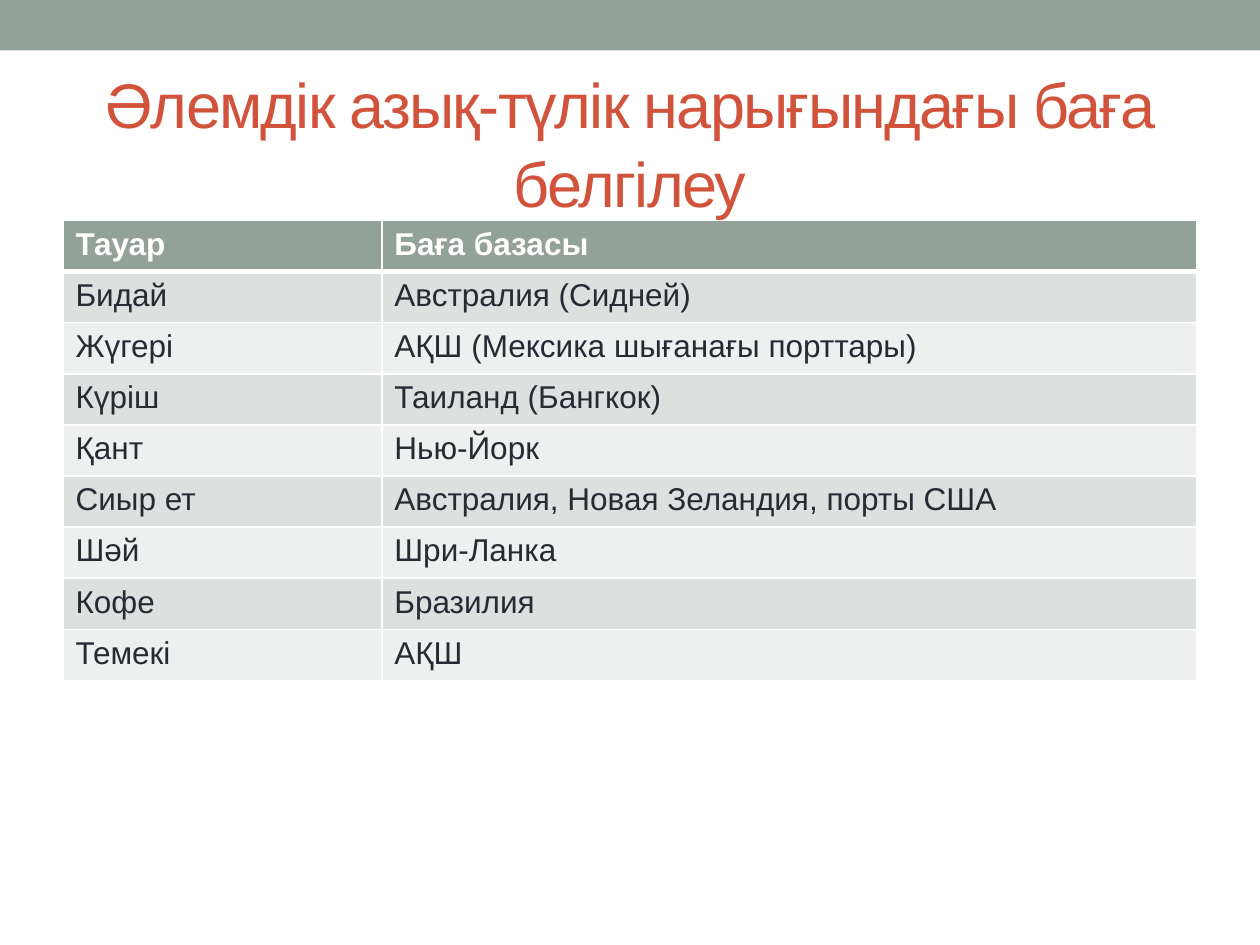
from lxml import etree
from pptx import Presentation
from pptx.dml.color import RGBColor
from pptx.enum.shapes import MSO_SHAPE
from pptx.enum.text import MSO_ANCHOR, MSO_AUTO_SIZE, PP_ALIGN
from pptx.oxml.ns import qn
from pptx.util import Pt

RECTANGLE = MSO_SHAPE.RECTANGLE
MIDDLE = MSO_ANCHOR.MIDDLE
NO_AUTOFIT = MSO_AUTO_SIZE.NONE
LEFT, CENTER = PP_ALIGN.LEFT, PP_ALIGN.CENTER
TITLE_ONLY = 5

COLORS = {
    "sage": "93A299",
    "brick": "D2533C",
    "ink": "292934",
    "white": "FFFFFF",
    "odd_band": "DCE0DE",
    "even_band": "EEF0EF",
}
HEADING = "Әлемдік азық-түлік нарығындағы баға белгілеу"
PRICE_BASES = [
    ("Тауар", "Баға базасы"),
    ("Бидай", "Австралия (Сидней)"),
    ("Жүгері", "АҚШ (Мексика шығанағы порттары)"),
    ("Күріш", "Таиланд (Бангкок)"),
    ("Қант", "Нью-Йорк"),
    ("Сиыр ет", "Австралия, Новая Зеландия, порты США"),
    ("Шәй", "Шри-Ланка"),
    ("Кофе", "Бразилия"),
    ("Темекі", "АҚШ"),
]


def paint(fill, color):
    """Give a fill one solid colour from the palette."""
    fill.solid()
    fill.fore_color.rgb = RGBColor.from_string(COLORS[color])


def write(frame, text, size=18, color="ink", bold=False, align=LEFT, spacing=0, leading=None):
    """Put formatted text in the first paragraph of a text frame."""
    paragraph = frame.paragraphs[0]
    paragraph.alignment = align
    paragraph.line_spacing = leading
    run = paragraph.add_run()
    run.text = text
    run.font.name = "Arial"
    run.font.size = Pt(size)
    run.font.bold = bold
    run.font.color.rgb = RGBColor.from_string(COLORS[color])
    if spacing:
        run.font._element.set("spc", str(int(spacing * 100)))


def add_border(cell, side, width):
    """Draw a white border on one side (L, R, T or B) of a cell."""
    properties = cell._tc.get_or_add_tcPr()
    line = etree.Element(qn(f"a:ln{side}"), w=str(Pt(width)))
    fill = etree.SubElement(line, qn("a:solidFill"))
    etree.SubElement(fill, qn("a:srgbClr"), val=COLORS["white"])
    borders = [child for child in properties if child.tag.startswith(qn("a:ln"))]
    properties.insert(len(borders), line)


def add_top_band(slide, left, top, width, height):
    """Draw the plain band across the top of the slide."""
    band = slide.shapes.add_shape(RECTANGLE, Pt(left), Pt(top), Pt(width), Pt(height))
    band.shadow.inherit = False
    paint(band.fill, "sage")
    band.line.fill.background()


def place_title(slide, left, top, width, height):
    """Move the title placeholder into its box and fill it."""
    title = slide.shapes.title
    title.left, title.top, title.width, title.height = map(Pt, (left, top, width, height))
    frame = title.text_frame
    frame.word_wrap = True
    frame.auto_size = NO_AUTOFIT
    frame.vertical_anchor = MIDDLE
    write(frame, HEADING, size=36, color="brick", align=CENTER, spacing=-1, leading=1.05)


def add_price_table(slide, left, top, width, height):
    """Build the banded table of goods and their price bases."""
    row_count = len(PRICE_BASES)
    table = slide.shapes.add_table(
        row_count, 2, Pt(left), Pt(top), Pt(width), Pt(height)
    ).table
    goods_width = 182.2
    table.columns[0].width = Pt(goods_width)
    table.columns[1].width = Pt(width - goods_width)
    for row_index, entries in enumerate(PRICE_BASES):
        table.rows[row_index].height = Pt(height / row_count)
        is_header = row_index == 0
        band = "sage" if is_header else ("even_band", "odd_band")[row_index % 2]
        for column_index, entry in enumerate(entries):
            cell = table.cell(row_index, column_index)
            paint(cell.fill, band)
            write(cell.text_frame, entry, color="white" if is_header else "ink", bold=is_header)
            for side in "LRTB":
                thick = (is_header and side == "B") or (row_index == 1 and side == "T")
                add_border(cell, side, 3 if thick else 1)


def main():
    """Assemble and save the slide."""
    presentation = Presentation()
    presentation.slide_width, presentation.slide_height = Pt(720), Pt(540)
    slide = presentation.slides.add_slide(presentation.slide_layouts[TITLE_ONLY])
    add_top_band(slide, 0, 0, 720, 28.8)
    place_title(slide, 36, 41.8, 648, 77.8)
    add_price_table(slide, 36, 126, 648, 262.8)
    presentation.save("out.pptx")


if __name__ == "__main__":
    main()
